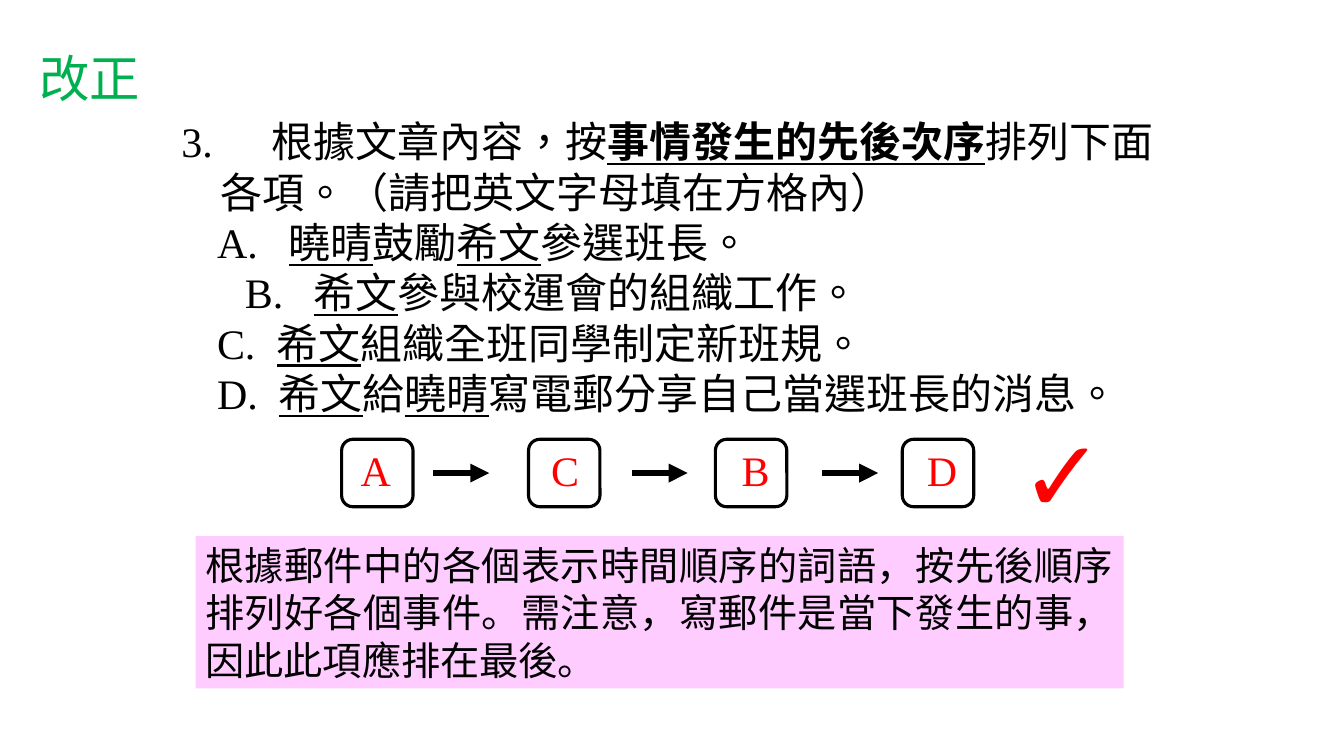
from lxml.etree import SubElement
from pptx import Presentation
from pptx.dml.color import RGBColor
from pptx.enum.lang import MSO_LANGUAGE_ID as Lang
from pptx.enum.shapes import MSO_CONNECTOR as Link, MSO_SHAPE as Kind
from pptx.enum.text import PP_ALIGN as Align
from pptx.oxml.ns import qn
from pptx.util import Cm, Pt

ROMAN = "Times New Roman"
SANS = "Arial"
HAN = "Noto Sans CJK TC"
ITEMS = [
    (0.9, 2.71, "A.", "_曉晴_鼓勵_希文_參選班長。"),
    (1.6, 3.34, "B.", "_希文_參與校運會的組織工作。"),
    (0.9, 2.41, "C.", "_希文_組織全班同學制定新班規。"),
    (0.9, 2.46, "D.", "_希文_給_曉晴_寫電郵分享自己當選班長的消息。"),
]


def paint(code):
    return RGBColor.from_string(code)


def write(para, text, size=30, face=SANS, color="000000", bold=False,
          under=False, lang=Lang.TRADITIONAL_CHINESE):
    run = para.add_run()
    run.text = text
    font = run.font
    font.size, font.name, font.bold = Pt(size), face, bold
    font.underline = under
    font.color.rgb = paint(color)
    font.language_id = lang
    if face.startswith("Noto"):
        SubElement(font._element, qn("a:ea"), typeface=face)


def frame(slide, x, y, w, h, wrap=True):
    body = slide.shapes.add_textbox(Cm(x), Cm(y), Cm(w), Cm(h)).text_frame
    body.word_wrap = wrap
    return body


def label(slide, x, y, w, h, text, wrap=True, **form):
    body = frame(slide, x, y, w, h, wrap)
    write(body.paragraphs[0], text, **form)


def hang(para, left, first, stop):
    props = para._p.get_or_add_pPr()
    props.set("marL", str(Cm(left)))
    props.set("indent", str(Cm(first - left)))
    tabs = SubElement(props, qn("a:tabLst"))
    SubElement(tabs, qn("a:tab"), pos=str(Cm(stop)), algn="l")


def quiz(slide, x, y, w, h):
    body = frame(slide, x, y, w, h)
    para = body.paragraphs[0]
    hang(para, 1, 0, 1.32)
    write(para, "3. \t", face=ROMAN)
    write(para, "根據文章內容，按")
    write(para, "事情發生的先後次序", face=HAN, bold=True, under=True)
    write(para, "排列下面各項。（請把英文字母填在方格內）")
    for first, left, mark, text in ITEMS:
        para = body.add_paragraph()
        hang(para, left, first, left)
        write(para, mark + "\t", face=ROMAN)
        for n, part in enumerate(text.split("_")):
            if part:
                write(para, part, under=n % 2 == 1)


def box(slide, kind, x, y, w, h, fill=None, line=None):
    shape = slide.shapes.add_shape(kind, Cm(x), Cm(y), Cm(w), Cm(h))
    shape.shadow.inherit = False
    if fill:
        shape.fill.solid()
        shape.fill.fore_color.rgb = paint(fill)
    else:
        shape.fill.background()
    if line:
        shape.line.color.rgb = paint(line)
        shape.line.width = Pt(2.25)
    else:
        shape.line.fill.background()
    return shape


def arrow(slide, x, y, w):
    link = slide.shapes.add_connector(
        Link.STRAIGHT, Cm(x), Cm(y), Cm(x + w), Cm(y))
    link.line.color.rgb = paint("000000")
    link.line.width = Pt(4.5)
    SubElement(link.line._get_or_add_ln(), qn("a:tailEnd"), type="triangle")
    SubElement(link._element.spPr, qn("a:effectLst"))


def chain(slide, x, y, w, h):
    step = 4.71
    for gap in (2.31, 7.31, 12.11):
        arrow(slide, x + gap, y + h / 2, 1.41)
    for n in range(4):
        box(slide, Kind.ROUNDED_RECTANGLE, x + n * step, y, w, h,
            line="000000")
    for gap, mark in zip((0.23, 5.03, 9.83, 14.5), "ACBD"):
        label(slide, x + gap, y, 1.6, 1.55, mark, face=ROMAN, color="FF0000")


def note(slide, x, y, w, h):
    shape = box(slide, Kind.RECTANGLE, x, y, w, h, fill="FFCCFF")
    body = shape.text_frame
    body.word_wrap = True
    para = body.paragraphs[0]
    para.alignment = Align.JUSTIFY
    write(para, "根據郵件中的各個表示時間順序的詞語，按先後順序排列好各個事件。"
          "需注意，寫郵件是當下發生的事，因此此項應排在最後。",
          size=28, lang=Lang.SIMPLIFIED_CHINESE)


def main():
    deck = Presentation()
    deck.slide_width, deck.slide_height = Cm(33.87), Cm(19.05)
    slide = deck.slides.add_slide(deck.slide_layouts[6])
    quiz(slide, 4.32, 2.79, 25.22, 8.03)
    label(slide, 25.48, 10.26, 2.59, 3.33, "✓", size=72, face="Calibri",
          color="FF0000")
    label(slide, 0.74, 1.07, 3.07, 1.8, "改正", wrap=False, size=36,
          face="Noto Sans CJK SC", color="00B050",
          lang=Lang.SIMPLIFIED_CHINESE)
    note(slide, 4.93, 13.51, 23.39, 3.84)
    chain(slide, 8.61, 11.07, 1.8, 1.7)
    deck.save("out.pptx")


if __name__ == "__main__":
    main()
